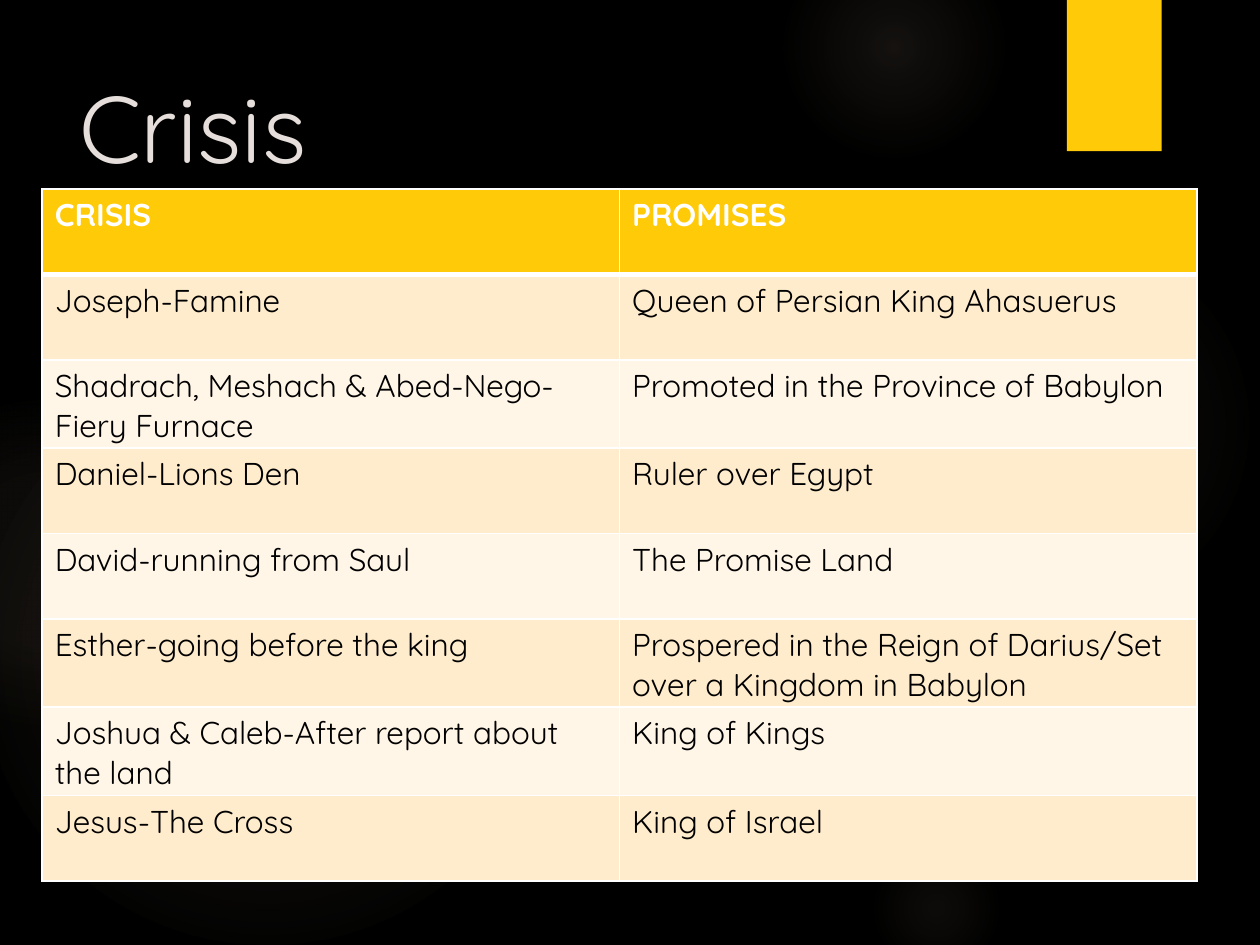
from dataclasses import dataclass

from lxml import etree
from pptx import Presentation
from pptx.dml.color import RGBColor
from pptx.enum.shapes import MSO_SHAPE
from pptx.enum.text import MSO_ANCHOR
from pptx.oxml import parse_xml
from pptx.util import Cm, Pt

ELLIPSE, RECTANGLE = MSO_SHAPE.OVAL, MSO_SHAPE.RECTANGLE
TOP = MSO_ANCHOR.TOP
DRAWING = "http://schemas.openxmlformats.org/drawingml/2006/main"


@dataclass(frozen=True)
class Theme:
    font: str = "Quicksand"
    title_size: int = 54
    table_size: int = 18
    background: str = "000000"
    title: str = "E5DEDB"
    glow: str = "968071"
    accent: str = "FFCA08"
    header_text: str = "FFFFFF"
    body_text: str = "000000"
    border: str = "FFFFFF"
    bands: tuple = ("FFECCC", "FFF6E7")


THEME = Theme()

# left, top, diameter in cm; then (position, opacity) stops in percent
GLOWS = [
    (17.5, 4.65, 7.82, [(0, 7), (36, 6), (69, 0)]),
    (15.8, -1.27, 4.45, [(0, 14), (36, 7), (73, 0)]),
    (17.5, 16.94, 2.74, [(0, 9), (36, 5), (66, 0)]),
    (-0.43, 7.42, 11.63, [(0, 11), (36, 10), (75, 0)]),
    (-2.34, 8.05, 6.55, [(0, 8), (36, 8), (72, 0)]),
]

ROWS = [
    ("CRISIS", "PROMISES"),
    ("Joseph-Famine", "Queen of Persian King Ahasuerus"),
    ("Shadrach, Meshach & Abed-Nego- Fiery Furnace", "Promoted in the Province of Babylon"),
    ("Daniel-Lions Den", "Ruler over Egypt"),
    ("David-running from Saul", "The Promise Land"),
    ("Esther-going before the king",
     "Prospered in the Reign of Darius/Set over a Kingdom in Babylon"),
    ("Joshua & Caleb-After report about the land", "King of Kings"),
    ("Jesus-The Cross", "King of Israel"),
]


def paint(fill, color):
    fill.solid()
    fill.fore_color.rgb = RGBColor.from_string(color)


def style_font(font, size, color, bold=False):
    font.name, font.size, font.bold = THEME.font, Pt(size), bold
    font.color.rgb = RGBColor.from_string(color)


def add_plain_shape(page, kind, left, top, width, height):
    shape = page.shapes.add_shape(kind, Cm(left), Cm(top), Cm(width), Cm(height))
    shape.shadow.inherit = False
    shape.line.fill.background()
    return shape


def add_glow(page, left, top, diameter, stops):
    """Add a soft disc whose colour fades out from its centre."""
    disc = add_plain_shape(page, ELLIPSE, left, top, diameter, diameter)
    stop_xml = "".join(
        f'<a:gs pos="{position * 1000}"><a:srgbClr val="{THEME.glow}">'
        f'<a:alpha val="{opacity * 1000}"/></a:srgbClr></a:gs>'
        for position, opacity in stops)
    gradient = parse_xml(
        f'<a:gradFill xmlns:a="{DRAWING}"><a:gsLst>{stop_xml}</a:gsLst><a:path path="circle">'
        '<a:fillToRect l="50000" t="50000" r="50000" b="50000"/></a:path></a:gradFill>')
    disc.element.spPr.find(f"{{{DRAWING}}}prstGeom").addnext(gradient)


def add_backdrop(page):
    paint(page.background.fill, THEME.background)
    for glow in GLOWS:
        add_glow(page, *glow)
    ribbon = add_plain_shape(page, RECTANGLE, 21.51, 0, 1.91, 3.05)
    paint(ribbon.fill, THEME.accent)


def add_title(page, text, left, top, width, height):
    box = page.shapes.add_textbox(Cm(left), Cm(top), Cm(width), Cm(height))
    frame = box.text_frame
    frame.word_wrap = True
    frame.vertical_anchor = TOP
    frame.text = text
    style_font(frame.paragraphs[0].font, THEME.title_size, THEME.title)


def set_borders(cell, **widths):
    """Draw the cell's edges; widths are points by side: L, R, T, B."""
    properties = cell._tc.get_or_add_tcPr()
    for side, width in widths.items():
        line = etree.SubElement(properties, f"{{{DRAWING}}}ln{side}", w=str(Pt(width)))
        fill = etree.SubElement(line, f"{{{DRAWING}}}solidFill")
        etree.SubElement(fill, f"{{{DRAWING}}}srgbClr", val=THEME.border)


def add_crisis_table(page, left, top, width, height):
    columns = len(ROWS[0])
    table = page.shapes.add_table(
        len(ROWS), columns, Cm(left), Cm(top), Cm(width), Cm(height)).table
    for column in table.columns:
        column.width = Cm(width / columns)
    for index, texts in enumerate(ROWS):
        header = index == 0
        table.rows[index].height = Cm(height / len(ROWS))
        fill = THEME.accent if header else THEME.bands[(index - 1) % 2]
        color = THEME.header_text if header else THEME.body_text
        for cell, text in zip(table.rows[index].cells, texts):
            cell.text = text
            style_font(cell.text_frame.paragraphs[0].font, THEME.table_size, color, header)
            set_borders(cell, L=1, R=1, T=3 if index == 1 else 1, B=3 if header else 1)
            paint(cell.fill, fill)


def main():
    deck = Presentation()
    deck.slide_width, deck.slide_height = Cm(25.4), Cm(19.05)
    page = deck.slides.add_slide(deck.slide_layouts[6])
    add_backdrop(page)
    add_title(page, "Crisis", 1.35, 1.27, 19.6, 3.89)
    add_crisis_table(page, 0.85, 3.81, 23.28, 13.78)
    deck.save("out.pptx")


if __name__ == "__main__":
    main()
